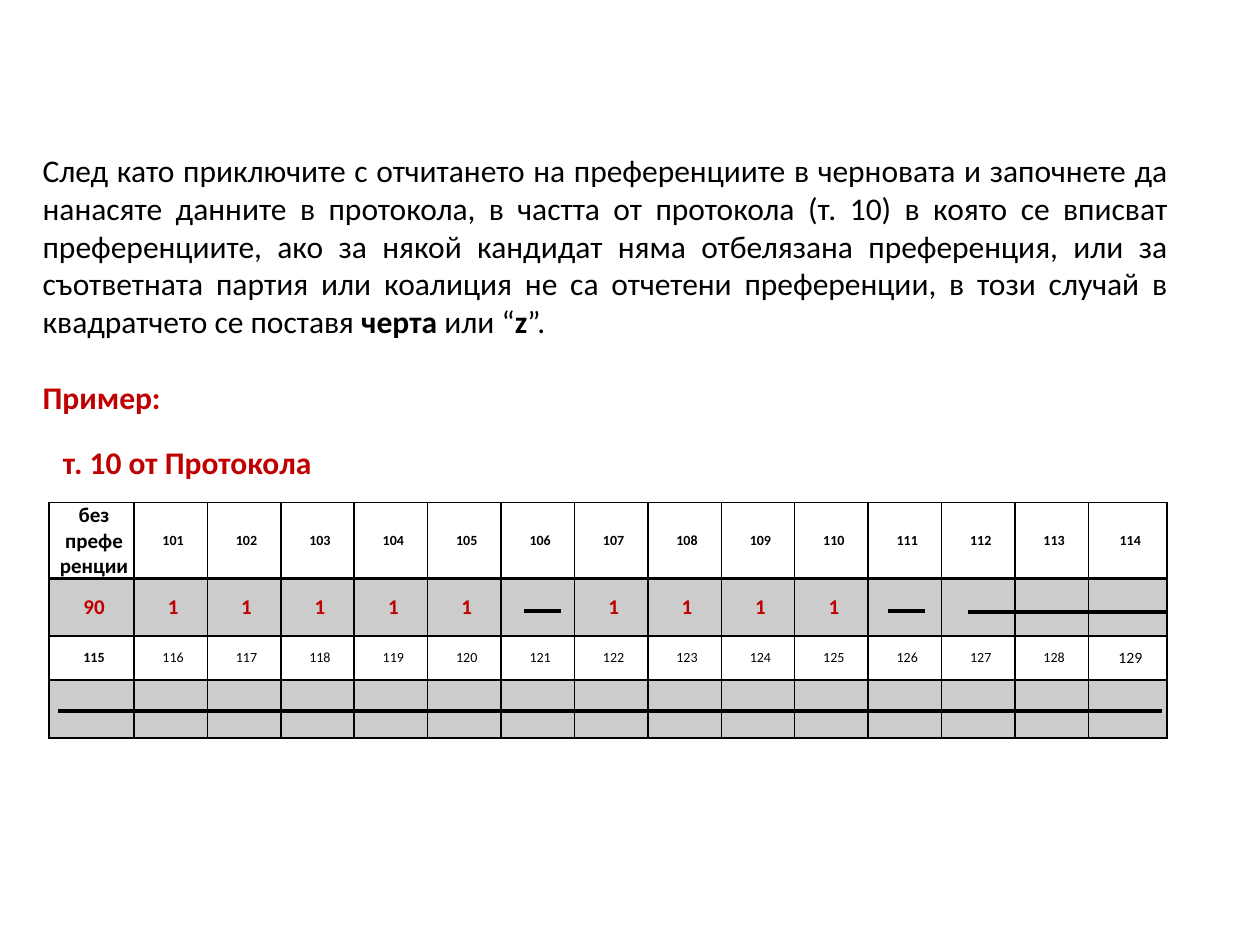
from pptx import Presentation
from pptx.dml.color import RGBColor
from pptx.enum.shapes import MSO_CONNECTOR
from pptx.enum.text import MSO_ANCHOR, MSO_AUTO_SIZE, PP_ALIGN
from pptx.oxml.ns import qn
from pptx.util import Cm, Pt
from lxml.etree import SubElement

RED, BLACK = "C00000", "000000"


def tint(part, color):
    part.rgb = RGBColor.from_string(color)


def write(para, text, size, bold=False, color=BLACK):
    run = para.add_run()
    run.text = text
    style = {"name": "Calibri", "size": Pt(size), "bold": bold}
    for key, val in style.items():
        setattr(run.font, key, val)
    tint(run.font.color, color)


deck = Presentation()
deck.slide_width, deck.slide_height = Cm(25.4), Cm(19.05)
slide = deck.slides.add_slide(deck.slide_layouts[6])

# Text boxes: left, top, height, then paragraphs of (text, bold, color) runs
boxes = [
    (0.61, 2.92, 6.4, [
        [("След като приключите с отчитането на преференциите в черновата "
          "и започнете да нанасяте данните в протокола, в частта от "
          "протокола (т. 10) в която се вписват преференциите, ако за "
          "някой кандидат няма отбелязана преференция, или за съответната "
          "партия или коалиция не са отчетени преференции, в този случай "
          "в квадратчето се поставя ", False, BLACK),
         ("черта ", True, BLACK), ("или “", False, BLACK),
         ("z", True, BLACK), ("”.", False, BLACK)],
        [("Пример:", True, RED)]]),
    (1.02, 8.81, 1.02, [[("т. 10 от Протокола", True, RED)]]),
]
for left, top, high, paras in boxes:
    box = slide.shapes.add_textbox(Cm(left), Cm(top), Cm(23.19), Cm(high))
    frame = box.text_frame
    frame.word_wrap = True
    frame.auto_size = MSO_AUTO_SIZE.SHAPE_TO_FIT_TEXT
    for i, runs in enumerate(paras):
        para = frame.add_paragraph() if i else frame.paragraphs[0]
        para.alignment = PP_ALIGN.JUSTIFY
        if i:
            para.space_before = Pt(22)
        for text, bold, color in runs:
            write(para, text, 18, bold, color)

# Table of candidate numbers and their preferences
wides = [1.71] + [1.48] * 13 + [1.59]
highs = [1.17, 1.17, 0.88, 1.17]
dashed = {6, 11, 12, 13, 14}
rows = [
    ["без префе\nренции"] + [str(n) for n in range(101, 115)],
    ["90"] + ["" if c in dashed else "1" for c in range(1, 15)],
    [str(n) for n in range(115, 130)],
    [""] * 15,
]
table = slide.shapes.add_table(
    4, 15, Cm(0.99), Cm(10.13), Cm(sum(wides)), Cm(sum(highs))).table
table.first_row = table.horz_banding = False
for col, wide in zip(table.columns, wides):
    col.width = Cm(wide)
for row, high in zip(table.rows, highs):
    row.height = Cm(high)

look = {"margin_left": Cm(0.1), "margin_right": 0, "margin_top": 0,
        "margin_bottom": 0, "vertical_anchor": MSO_ANCHOR.MIDDLE}
for r, texts in enumerate(rows):
    for c, text in enumerate(texts):
        cell = table.cell(r, c)
        for key, val in look.items():
            setattr(cell, key, val)

        # Cell text
        size = 12 if r == 1 or r + c == 0 else 9 if (r, c) == (2, 14) else 8
        bold = r < 2 or c == 0
        for i, line in enumerate(text.split("\n")):
            frame = cell.text_frame
            para = frame.add_paragraph() if i else frame.paragraphs[0]
            para.alignment = PP_ALIGN.CENTER
            if line:
                write(para, line, size, bold, RED if r == 1 else BLACK)

        # Borders, heavier under the head row
        props = cell._tc.get_or_add_tcPr()
        for side in "LRTB":
            thick = 2 if (r, side) in {(0, "B"), (1, "T")} else 1
            edge = SubElement(props, qn("a:ln" + side), w=str(Pt(thick)))
            fill = SubElement(edge, qn("a:solidFill"))
            SubElement(fill, qn("a:srgbClr"), val=BLACK)

        # Answer rows have a see-through black fill
        if r % 2:
            cell.fill.solid()
            tint(cell.fill.fore_color, BLACK)
            shade = props.find(qn("a:solidFill")).find(qn("a:srgbClr"))
            SubElement(shade, qn("a:alpha"), val="20000")
        else:
            cell.fill.background()

# Dashes over the empty squares: start, end, height
for start, end, y in [(19.51, 23.5, 12.34), (1.17, 23.42, 14.33),
                      (10.57, 11.3, 12.32), (17.91, 18.64, 12.32)]:
    dash = slide.shapes.add_connector(
        MSO_CONNECTOR.STRAIGHT, Cm(start), Cm(y), Cm(end), Cm(y))
    dash.line.width = Pt(2.25)
    tint(dash.line.color, BLACK)
    SubElement(dash._element.spPr, qn("a:effectLst"))

deck.save("out.pptx")
